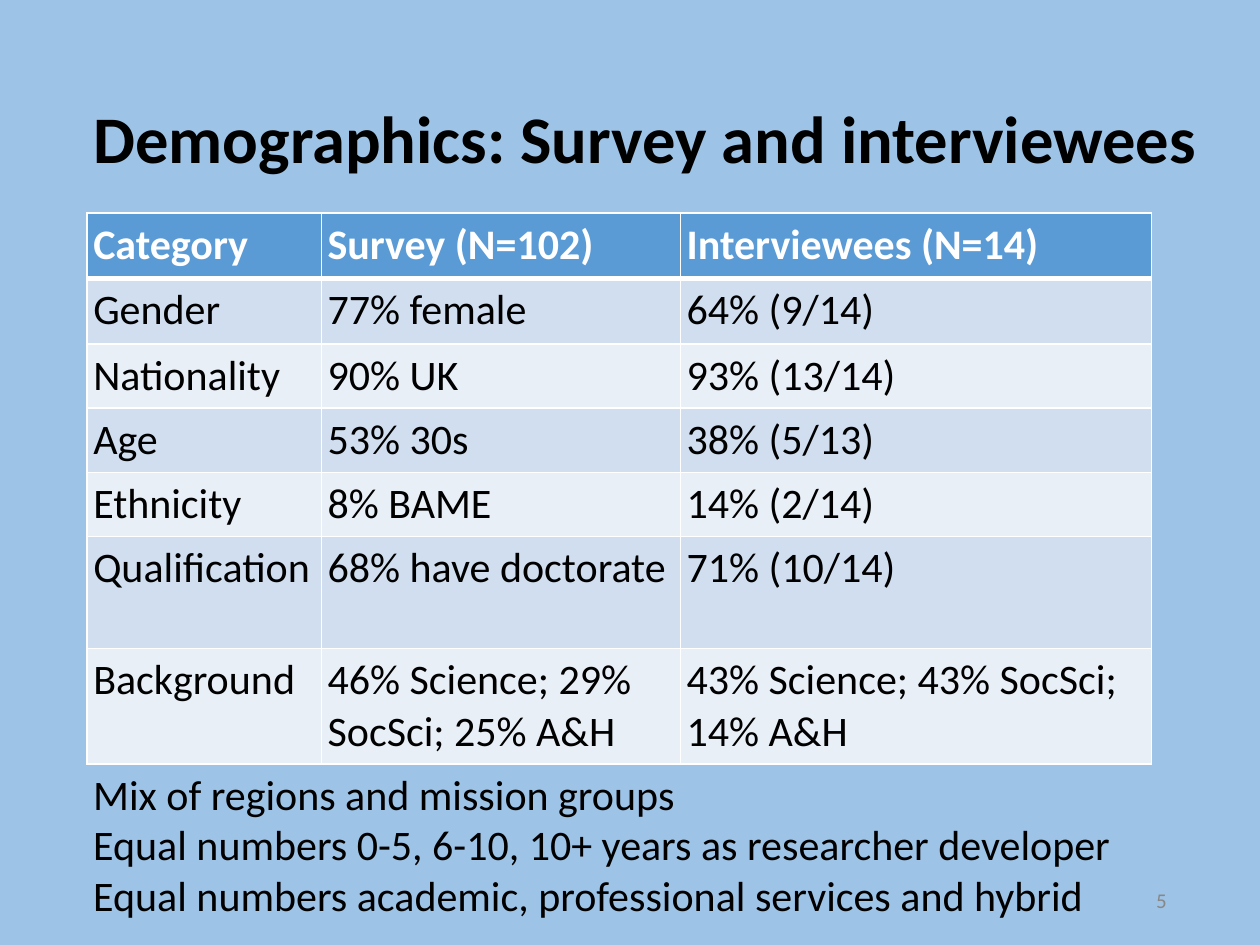
"""Build the survey and interviewee demographics slide."""
from lxml import etree
from pptx import Presentation
from pptx.dml.color import RGBColor
from pptx.enum.text import MSO_ANCHOR, PP_ALIGN
from pptx.oxml.ns import qn
from pptx.util import Inches, Pt

LEFT, RIGHT = PP_ALIGN.LEFT, PP_ALIGN.RIGHT
TOP, MIDDLE = MSO_ANCHOR.TOP, MSO_ANCHOR.MIDDLE

FONT = "Calibri"
COLORS = {
    "background": "9DC3E6",
    "header": "5B9BD5",
    "odd": "D0DEEF",
    "even": "E9EFF7",
    "white": "FFFFFF",
    "text": "000000",
    "number": "888888",
}

TITLE = "Demographics: Survey and interviewees"
ROWS = [
    ("Category", "Survey (N=102)", "Interviewees (N=14)"),
    ("Gender", "77% female", "64% (9/14)"),
    ("Nationality", "90% UK", "93% (13/14)"),
    ("Age", "53% 30s", "38% (5/13)"),
    ("Ethnicity", "8% BAME", "14% (2/14)"),
    ("Qualification", "68% have doctorate", "71% (10/14)"),
    ("Background", "46% Science; 29% SocSci; 25% A&H",
     "43% Science; 43% SocSci; 14% A&H"),
]
NOTES = [
    "Mix of regions and mission groups",
    "Equal numbers 0-5, 6-10, 10+ years as researcher developer",
    "Equal numbers academic, professional services and hybrid",
]
NUMBER = "5"

MARGIN, INSET = 0.69, 0.05
TABLE_TOP = 1.69
COL_WIDTHS = [1.86, 2.85, 3.74]
ROW_HEIGHTS = [0.52, 0.52, 0.51, 0.51, 0.51, 0.89, 0.89]


def rgb(name):
    return RGBColor.from_string(COLORS[name])


def set_insets(obj):
    for side in ("left", "top", "right", "bottom"):
        setattr(obj, f"margin_{side}", Inches(INSET))


def set_text(tf, lines, size, color="text", bold=False, align=LEFT):
    tf.text = "\n".join(lines)
    for p in tf.paragraphs:
        p.alignment = align
        for r in p.runs:
            r.font.name = FONT
            r.font.size = Pt(size)
            r.font.bold = bold
            r.font.color.rgb = rgb(color)


def fill_frame(sp, lines, size, anchor=TOP, **style):
    tf = sp.text_frame
    tf.word_wrap = True
    tf.vertical_anchor = anchor
    set_insets(tf)
    set_text(tf, lines, size, **style)


def set_borders(cell, top, bottom):
    tc_pr = cell._tc.get_or_add_tcPr()
    for side, width in zip("LRTB", (1, 1, top, bottom)):
        ln = etree.SubElement(tc_pr, qn(f"a:ln{side}"), w=str(Pt(width)))
        fill = etree.SubElement(ln, qn("a:solidFill"))
        etree.SubElement(fill, qn("a:srgbClr"), val=COLORS["white"])


def add_title(s):
    sp = s.shapes.title
    sp.left, sp.top = Inches(MARGIN), Inches(0.4)
    sp.width, sp.height = Inches(9.17), Inches(1.45)
    fill_frame(sp, [TITLE], 38, MIDDLE, bold=True)
    sp.text_frame.paragraphs[0].line_spacing = 0.9


def add_demographics(s):
    table = s.shapes.add_table(
        len(ROWS), len(COL_WIDTHS), Inches(MARGIN), Inches(TABLE_TOP),
        Inches(sum(COL_WIDTHS)), Inches(sum(ROW_HEIGHTS))).table
    for col, width in zip(table.columns, COL_WIDTHS):
        col.width = Inches(width)
    for i, (row, height) in enumerate(zip(ROWS, ROW_HEIGHTS)):
        table.rows[i].height = Inches(height)
        head = i == 0
        fill = "header" if head else "odd" if i % 2 else "even"
        for j, text in enumerate(row):
            cell = table.cell(i, j)
            set_insets(cell)
            set_borders(cell, 3 if i == 1 else 1, 3 if head else 1)
            cell.fill.solid()
            cell.fill.fore_color.rgb = rgb(fill)
            set_text(cell.text_frame, [text], 24,
                     "white" if head else "text", head)


def add_box(s, x, y, w, h, lines, size, **style):
    sp = s.shapes.add_textbox(Inches(x), Inches(y), Inches(w), Inches(h))
    fill_frame(sp, lines, size, **style)


def main():
    prs = Presentation()
    prs.slide_width, prs.slide_height = Inches(10), Inches(7.5)
    s = prs.slides.add_slide(prs.slide_layouts[5])
    s.background.fill.solid()
    s.background.fill.fore_color.rgb = rgb("background")
    add_title(s)
    add_demographics(s)
    add_box(s, MARGIN, 6.05, 9.17, 1.27, NOTES, 24)
    add_box(s, 9.02, 7, 0.29, 0.29, [NUMBER], 12,
            anchor=MIDDLE, color="number", align=RIGHT)
    prs.save("out.pptx")


if __name__ == "__main__":
    main()
